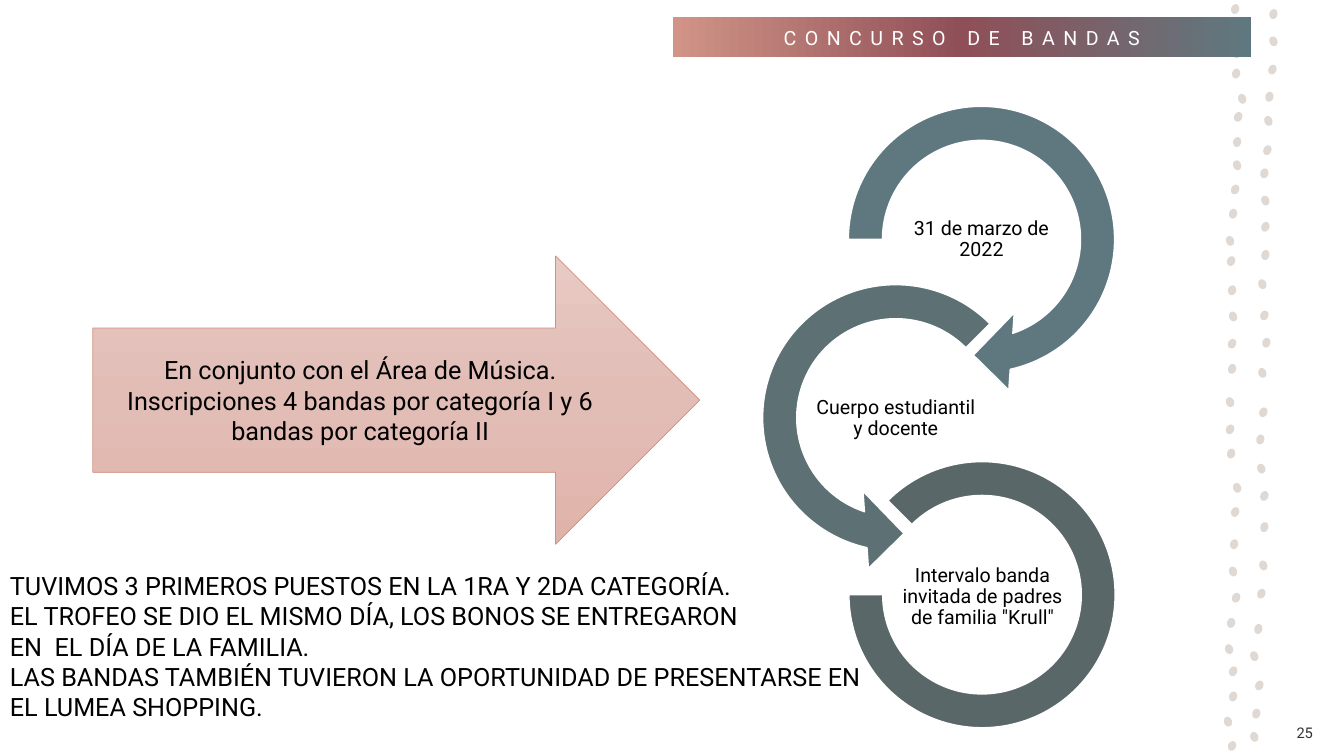
import copy
import pptx
import pptx.util
import pptx.dml.color
import pptx.enum.shapes
import pptx.enum.text
import pptx.oxml.ns

Inches = pptx.util.Inches
Pt = pptx.util.Pt
SHAPE = pptx.enum.shapes.MSO_SHAPE
ALIGN = pptx.enum.text.PP_ALIGN
ANCHOR = pptx.enum.text.MSO_ANCHOR
qn = pptx.oxml.ns.qn

COLORS = {
    "dot": "E0D8D2", "white": "FFFFFF", "black": "000000", "number": "323232",
    "teal": "5F787F", "slate": "5D7073", "gray": "5A6768",
    "wine": "8F4F58", "salmon": "D19486", "arrow_line": "D09182",
    "pink_light": "E8C9C3", "pink": "E2BDB6", "pink_dark": "E0B3AA",
}

LEFT_DOTS = [
    (12.25, 0.09), (12.23, 0.33), (12.27, 0.53), (12.26, 0.73), (12.32, 0.98),
    (12.28, 1.16), (12.27, 1.41), (12.27, 1.64), (12.25, 1.88), (12.23, 2.12),
    (12.2, 2.39), (12.21, 2.59), (12.22, 2.88), (12.23, 3.14), (12.22, 3.41),
    (12.22, 3.66), (12.2, 3.99), (12.2, 4.26), (12.21, 4.5), (12.27, 4.84),
    (12.25, 5.08), (12.24, 5.4), (12.23, 5.67), (12.26, 5.93), (12.21, 6.18),
    (12.19, 6.44), (12.23, 6.66), (12.23, 6.91), (12.18, 7.16), (12.22, 7.4),
]
RIGHT_DOTS = [
    (12.63, 0.14), (12.63, 0.41), (12.62, 0.69), (12.59, 0.96), (12.58, 1.2),
    (12.57, 1.49), (12.54, 1.72), (12.55, 1.99), (12.55, 2.25), (12.55, 2.53),
    (12.52, 2.82), (12.54, 3.13), (12.56, 3.4), (12.52, 3.7), (12.53, 4.09),
    (12.5, 4.36), (12.51, 4.65), (12.54, 4.92), (12.54, 5.23), (12.53, 5.61),
    (12.51, 5.89), (12.48, 6.24), (12.44, 6.51), (12.49, 6.8), (12.46, 7.08),
    (12.44, 7.31),
]
STAGES = [
    (SHAPE.CIRCULAR_ARROW, "teal", (0.85, 0, 3.07, 3.07),
     (0.11, 11.423, 45, 108, 0.125), (1.53, 1.11), "31 de marzo de 2022"),
    (SHAPE.LEFT_CIRCULAR_ARROW, "slate", (0, 1.77, 3.07, 3.07),
     (0.11, 11.423, 63, 189, 0.125), (0.68, 2.89), "Cuerpo estudiantil y docente"),
    (SHAPE.BLOCK_ARC, "gray", (1.07, 3.74, 2.64, 2.64),
     (135, 108, 0.127), (1.54, 4.66),
     'Intervalo banda invitada de padres de familia "Krull"'),
]
RESULTS = [
    "TUVIMOS 3 PRIMEROS PUESTOS EN LA 1RA Y 2DA CATEGORÍA.",
    "EL TROFEO SE DIO EL MISMO DÍA, LOS BONOS SE ENTREGARON",
    "EN  EL DÍA DE LA FAMILIA.",
    "LAS BANDAS TAMBIÉN TUVIERON LA OPORTUNIDAD DE PRESENTARSE EN EL LUMEA SHOPPING.",
]


def rgb(name):
    return pptx.dml.color.RGBColor.from_string(COLORS[name])


def set_all(obj, values):
    for name, value in values.items():
        setattr(obj, name, value)


def write(sp, lines, size, color="black", anchor=ANCHOR.MIDDLE, inset=None, **para):
    tf = sp.text_frame
    set_all(tf, {"word_wrap": True, "vertical_anchor": anchor})
    if inset is not None:
        for side in ("left", "top", "right", "bottom"):
            setattr(tf, "margin_" + side, Inches(inset))
    for i, line in enumerate(lines):
        p = tf.add_paragraph() if i else tf.paragraphs[0]
        set_all(p, para)
        r = p.add_run()
        r.text = line
        set_all(r.font, {"name": "Roboto", "size": Pt(size)})
        r.font.color.rgb = rgb(color)
    return tf


def add_text(s, box, lines, size, **options):
    sp = s.shapes.add_textbox(*map(Inches, box))
    return write(sp, lines, size, **options)


def add_shape(s, kind, box, fill=None, line=None, width=1):
    sp = s.shapes.add_shape(kind, *map(Inches, box))
    sp.shadow.inherit = False
    if fill:
        sp.fill.solid()
        sp.fill.fore_color.rgb = rgb(fill)
    if line:
        sp.line.color.rgb = rgb(line)
        sp.line.width = Pt(width)
    else:
        sp.line.fill.background()
    return sp


def fill_gradient(sp, names, angle):
    sp.fill.gradient()
    sp.fill.gradient_angle = angle
    first = sp._element.spPr.find(".//" + qn("a:gs"))
    first.addnext(copy.deepcopy(first))
    for i, (stop, name) in enumerate(zip(sp.fill.gradient_stops, names)):
        stop.color.rgb = rgb(name)
        stop.position = i / 2


def add_dots(s, centers):
    w, h = 0.08, 0.1
    for i, (x, y) in enumerate(centers):
        sp = add_shape(s, SHAPE.OVAL, (x - w / 2, y - h / 2, w, h), "dot")
        sp.rotation = (15, -20, 25)[i % 3]


def add_banner(s, box):
    sp = s.shapes.title
    s.shapes._spTree.append(sp._element)
    set_all(sp, dict(zip(("left", "top", "width", "height"), map(Inches, box))))
    fill_gradient(sp, ("teal", "wine", "salmon"), 180)
    tf = write(sp, ["CONCURSO DE BANDAS"], 14, "white", alignment=ALIGN.CENTER)
    tf.auto_size = pptx.enum.text.MSO_AUTO_SIZE.NONE
    tf.paragraphs[0].runs[0].font._element.set("spc", "600")


def add_stages(s, left, top):
    for kind, color, (x, y, w, h), adjustments, (tx, ty), text in STAGES:
        sp = add_shape(s, kind, (left + x, top + y, w, h), color, "white")
        for i, value in enumerate(adjustments):
            sp.adjustments[i] = value
        add_text(s, (left + tx, top + ty, 1.71, 0.85), [text], 14, inset=0.01,
                 alignment=ALIGN.CENTER, line_spacing=0.9)


def add_summary_arrow(s, box):
    sp = add_shape(s, SHAPE.RIGHT_ARROW, box, line="arrow_line", width=0.5)
    fill_gradient(sp, ("pink_light", "pink", "pink_dark"), 270)
    text = ("En conjunto con el Área de Música. Inscripciones 4 bandas por "
            "categoría I y 6 bandas por categoría II")
    write(sp, [text], 18, alignment=ALIGN.CENTER)


def main():
    prs = pptx.Presentation()
    set_all(prs, {"slide_width": Inches(13.33), "slide_height": Inches(7.5)})
    s = prs.slides.add_slide(prs.slide_layouts[5])
    add_dots(s, LEFT_DOTS)
    add_dots(s, RIGHT_DOTS)
    add_banner(s, (6.67, 0.17, 5.74, 0.4))
    add_text(s, (12.63, 7.07, 0.49, 0.4), ["25"], 10.5, color="number",
             alignment=ALIGN.RIGHT)
    add_stages(s, 7.35, 0.84)
    add_summary_arrow(s, (0.92, 2.54, 6.02, 2.86))
    add_text(s, (0, 5.61, 8.75, 1.62), RESULTS, 18, anchor=ANCHOR.TOP)
    prs.save("out.pptx")


if __name__ == "__main__":
    main()
